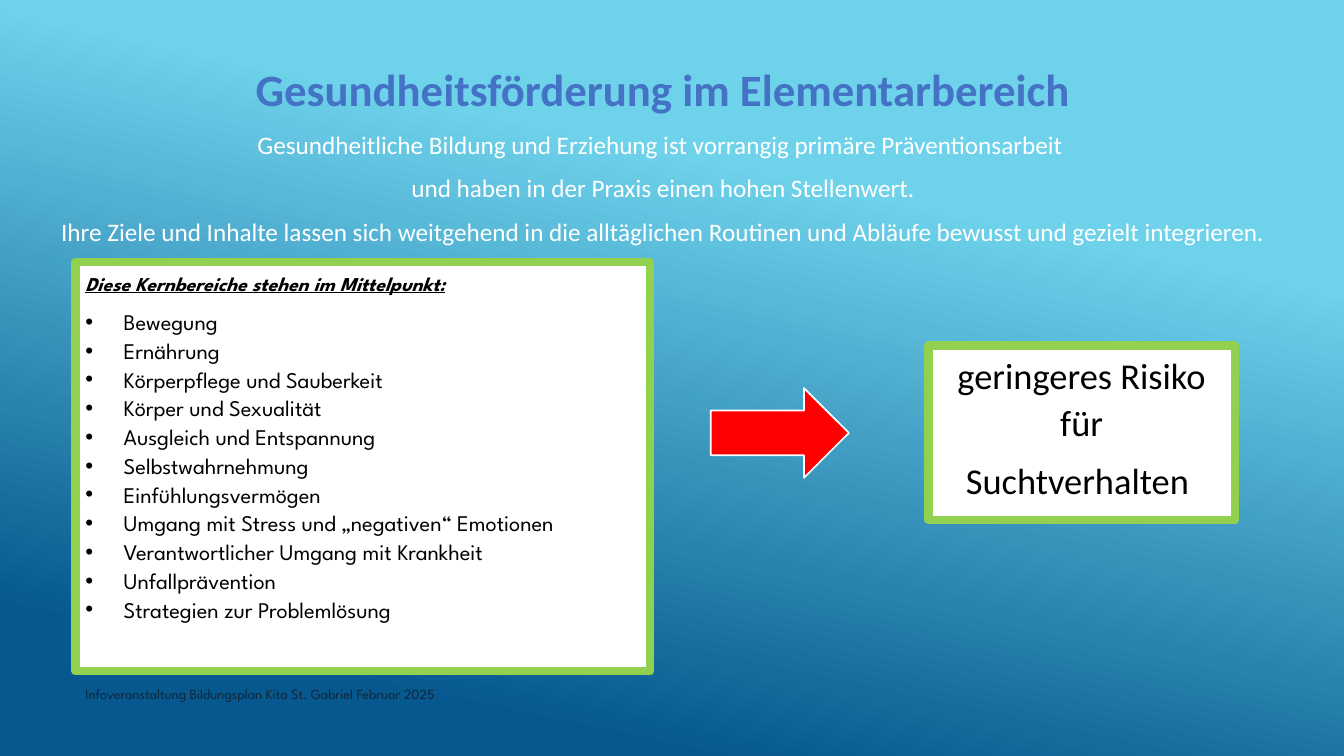
from dataclasses import dataclass

import pptx
import pptx.dml.color
import pptx.enum.shapes
import pptx.enum.text
import pptx.oxml
import pptx.oxml.ns
import pptx.util

SLIDE_WIDTH = pptx.util.Inches(13.33)
SLIDE_HEIGHT = pptx.util.Inches(7.5)
SANS, GEOMETRIC = "Calibri", "League Spartan"
BLACK, WHITE, GREEN, RED = "000000", "FFFFFF", "92D050", "FF0000"
LEFT, CENTER = pptx.enum.text.PP_ALIGN.LEFT, pptx.enum.text.PP_ALIGN.CENTER
RECTANGLE = pptx.enum.shapes.MSO_SHAPE.RECTANGLE
RIGHT_ARROW = pptx.enum.shapes.MSO_SHAPE.RIGHT_ARROW
BULLET_INDENT = pptx.util.Inches(0.38)


@dataclass
class Area:
    """Place on the slide, in percent of its width and height."""
    left: float
    top: float
    width: float
    height: float

    def lengths(self) -> tuple[int, int, int, int]:
        return (int(SLIDE_WIDTH * self.left / 100), int(SLIDE_HEIGHT * self.top / 100),
                int(SLIDE_WIDTH * self.width / 100), int(SLIDE_HEIGHT * self.height / 100))


@dataclass
class Line:
    text: str
    size: float
    font: str = SANS
    color: str = BLACK
    align: pptx.enum.text.PP_ALIGN = CENTER
    bold: bool = False
    emphasized: bool = False
    bullet: bool = False
    space_after: float = 8


@dataclass
class Panel:
    area: Area
    preset: pptx.enum.shapes.MSO_SHAPE
    fill: str
    border: str
    border_width: float
    lines: list[Line]
    inset_top: float = 0.05


def rgb(color: str) -> pptx.dml.color.RGBColor:
    return pptx.dml.color.RGBColor.from_string(color)


def add_bullet(paragraph) -> None:
    properties = paragraph._p.get_or_add_pPr()
    properties.set("marL", str(BULLET_INDENT))
    properties.set("indent", str(-BULLET_INDENT))
    namespace = pptx.oxml.ns.nsdecls("a")
    properties.append(pptx.oxml.parse_xml(f'<a:buFont {namespace} typeface="Arial"/>'))
    properties.append(pptx.oxml.parse_xml(f'<a:buChar {namespace} char="•"/>'))


def write_lines(frame, lines: list[Line], inset_top: float = 0.05) -> None:
    frame.word_wrap = True
    frame.vertical_anchor = pptx.enum.text.MSO_ANCHOR.TOP
    frame.margin_top = pptx.util.Inches(inset_top)
    for index, line in enumerate(lines):
        paragraph = frame.add_paragraph() if index else frame.paragraphs[0]
        paragraph.text = line.text
        paragraph.alignment = line.align
        paragraph.line_spacing = 1.07
        paragraph.space_after = pptx.util.Pt(line.space_after)
        if line.bullet:
            add_bullet(paragraph)
        font = paragraph.font
        font.name, font.size = line.font, pptx.util.Pt(line.size)
        font.color.rgb = rgb(line.color)
        font.bold = line.bold
        font.italic = font.underline = line.emphasized


def add_text(slide, area: Area, lines: list[Line]) -> None:
    write_lines(slide.shapes.add_textbox(*area.lengths()).text_frame, lines)


def add_panel(slide, panel: Panel) -> None:
    shape = slide.shapes.add_shape(panel.preset, *panel.area.lengths())
    shape.shadow.inherit = False
    shape.fill.solid()
    shape.fill.fore_color.rgb = rgb(panel.fill)
    shape.line.color.rgb = rgb(panel.border)
    shape.line.width = pptx.util.Pt(panel.border_width)
    if panel.lines:
        write_lines(shape.text_frame, panel.lines, panel.inset_top)


def paint_background(slide) -> None:
    fill = slide.background.fill
    fill.gradient()
    fill.gradient_angle = 360 - 102
    for stop, (position, color) in zip(fill.gradient_stops, [(0.28, "6ED2EB"), (0.86, "06588E")]):
        stop.position = position
        stop.color.rgb = rgb(color)


INTRODUCTION = [
    Line("Gesundheitsförderung im Elementarbereich", 32, color="4472C4", bold=True),
    *(Line(text, 18, color=WHITE) for text in (
        "Gesundheitliche Bildung und Erziehung ist vorrangig primäre Präventionsarbeit ",
        "und haben in der Praxis einen hohen Stellenwert.",
        "Ihre Ziele und Inhalte lassen sich weitgehend in die alltäglichen Routinen "
        "und Abläufe bewusst und gezielt integrieren.",
    )),
]

CORE_AREAS = [
    Line("Diese Kernbereiche stehen im Mittelpunkt:", 14, GEOMETRIC, align=LEFT,
         bold=True, emphasized=True),
    *(Line(text, 16, GEOMETRIC, align=LEFT, bullet=True, space_after=0) for text in (
        "Bewegung",
        "Ernährung",
        "Körperpflege und Sauberkeit",
        "Körper und Sexualität",
        "Ausgleich und Entspannung",
        "Selbstwahrnehmung",
        "Einfühlungsvermögen",
        "Umgang mit Stress und „negativen“ Emotionen",
        "Verantwortlicher Umgang mit Krankheit",
        "Unfallprävention",
        "Strategien zur Problemlösung",
    )),
]

LOWER_RISK = [Line("geringeres Risiko für", 26), Line("Suchtverhalten ", 26)]

FOOTER = [Line("Infoveranstaltung Bildungsplan Kita St. Gabriel Februar 2025", 10,
               GEOMETRIC, "12263A", LEFT, space_after=0)]

PANELS = [
    Panel(Area(5.62, 34.67, 42.76, 54.13), RECTANGLE, WHITE, GREEN, 6, CORE_AREAS, 0.08),
    Panel(Area(69.08, 45.7, 22.81, 23.07), RECTANGLE, WHITE, GREEN, 6, LOWER_RISK),
    Panel(Area(52.88, 51.33, 10.28, 11.87), RIGHT_ARROW, RED, WHITE, 1.25, []),
]


def main() -> None:
    presentation = pptx.Presentation()
    presentation.slide_width, presentation.slide_height = SLIDE_WIDTH, SLIDE_HEIGHT
    slide = presentation.slides.add_slide(presentation.slide_layouts[6])
    paint_background(slide)
    add_text(slide, Area(1.7, 7.03, 95.27, 26.53), INTRODUCTION)
    for panel in PANELS:
        add_panel(slide, panel)
    add_text(slide, Area(5.62, 89.9, 42.76, 4.8), FOOTER)
    presentation.save("out.pptx")


if __name__ == "__main__":
    main()
